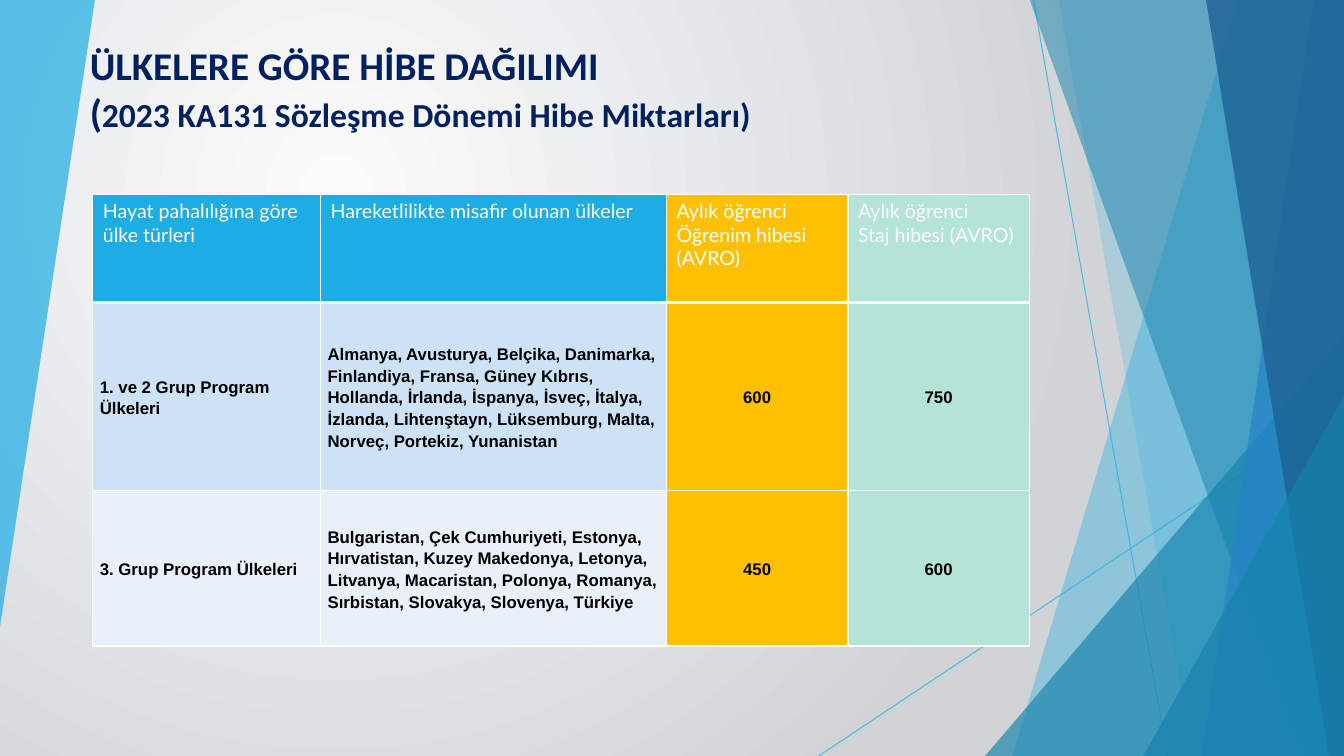
from copy import deepcopy
from lxml.etree import SubElement as Sub
from pptx import Presentation
from pptx.dml.color import RGBColor as RGB
from pptx.enum.shapes import MSO_CONNECTOR as LINK, MSO_SHAPE as SHAPE
from pptx.enum.text import MSO_ANCHOR as ANCHOR, MSO_AUTO_SIZE as AUTO, PP_ALIGN as ALIGN
from pptx.oxml.ns import qn
from pptx.util import Inches, Pt

SKY, TEAL, WHITE, GOLD, MINT = "1CADE4", "1482AC", "FFFFFF", "FFC000", "B3E4D6"


def paint(fill, color, alpha=100):
    """Fill with a solid hex colour; alpha is the opacity in percent."""
    fill.solid()
    fill.fore_color.rgb = RGB.from_string(color)
    if alpha < 100:
        tone = fill._xPr.find(qn("a:solidFill"))[0]
        Sub(tone, qn("a:alpha"), val=str(alpha * 1000))


def write(para, words, size=12, font="Arial", color="000000", bold=False):
    """Add formatted text to a paragraph, with a line break at each newline."""
    for i, line in enumerate(words.split("\n")):
        if i:
            para.add_line_break()
        run = para.add_run()
        run.text = line
        run.font.size, run.font.name, run.font.bold = Pt(size), font, bold
        paint(run.font.fill, color)
        if i:
            run._r.getprevious().append(deepcopy(run._r.rPr))


deck = Presentation()
deck.slide_width, deck.slide_height = Inches(13.33), Inches(7.5)
slide = deck.slides.add_slide(deck.slide_layouts[5])
shapes = slide.shapes

# Background: a glow centred in the upper left quarter
back = slide.background.fill
back.gradient()
for stop, color in zip(back.gradient_stops, ("FCFCFC", "D0D4D7")):
    stop.color.rgb = RGB.from_string(color)
back.gradient_stops[0].position, back.gradient_stops[1].position = 0, 1
grad = back._xPr.find(qn("a:gradFill"))
grad.remove(grad.find(qn("a:lin")))
glow = Sub(grad, qn("a:path"), path="circle")
Sub(glow, qn("a:fillToRect"), l="50000", t="50000", r="100000", b="100000")

# Thin lines behind the facets
for x1, y1, x2, y2 in [(10.25, 0, 11.58, 7.5), (13.33, 4.03, 8.12, 7.5)]:
    line = shapes.add_connector(LINK.STRAIGHT, Inches(x1), Inches(y1), Inches(x2), Inches(y2))
    line.line.width = Pt(0.75)
    paint(line.line.fill, SKY, 70)
    Sub(line.element.spPr, qn("a:effectLst"))

# Facets: a corner list is a polygon, (top x, bottom x) is a band that runs
# to the right edge, and a single left x with a top is a triangle
facets = [
    ([(0, 0), (0.94, -0.01), (0.94, 0.01), (0, 6.22)], SKY, 70),
    ((12.28, 10.04), SKY, 36),
    ((10.5, 11.83), SKY, 20),
    ({"left": 9.77, "top": 3.33}, TEAL, 66),
    ((10.21, 12.91), TEAL, 50),
    ((13.03, 11.92), "2683C6", 70),
    ((11.96, 13.18), "1D6294", 80),
    ({"left": 11.34, "top": 3.93}, TEAL, 66),
]
for form, color, alpha in facets:
    if isinstance(form, dict):
        left, top = form["left"], form["top"]
        facet = shapes.add_shape(SHAPE.ISOSCELES_TRIANGLE, Inches(left), Inches(top),
                                 Inches(13.33 - left), Inches(7.5 - top))
        facet.adjustments[0] = 1
    else:
        if isinstance(form, tuple):
            form = [(form[0], -0.01), (13.33, -0.01), (13.33, 7.5), (form[1], 7.5)]
        spots = [(Inches(x), Inches(y)) for x, y in form]
        path = shapes.build_freeform(*spots[0])
        path.add_line_segments(spots[1:], close=True)
        facet = path.convert_to_shape()
    facet.shadow.inherit = False
    facet.line.fill.background()
    paint(facet.fill, color, alpha)

# Title, brought in front of the facets
title = shapes.title
title.left, title.top, title.width, title.height = map(Inches, (0.79, 0.63, 9.43, 0.76))
frame = title.text_frame
frame.word_wrap, frame.auto_size, frame.vertical_anchor = True, AUTO.NONE, ANCHOR.BOTTOM
head = frame.paragraphs[0]
head.alignment = ALIGN.LEFT
look = dict(font="Calibri", color="002060", bold=True)
write(head, "ÜLKELERE GÖRE HİBE DAĞILIMI \n(", size=28, **look)
write(head, "2023 KA131 Sözleşme Dönemi Hibe Miktarları)", size=24, **look)
shapes.element.append(title.element)

# Grant table
rows = [
    ("Hayat pahalılığına göre ülke türleri", "Hareketlilikte misafir olunan ülkeler",
     "Aylık öğrenci Öğrenim hibesi (AVRO)", "Aylık öğrenci \nStaj hibesi (AVRO)"),
    ("1. ve 2 Grup Program Ülkeleri",
     "Almanya, Avusturya, Belçika, Danimarka, Finlandiya, Fransa, Güney Kıbrıs, "
     "Hollanda, İrlanda, İspanya, İsveç, İtalya, İzlanda, Lihtenştayn, Lüksemburg, "
     "Malta, Norveç, Portekiz, Yunanistan", "600", "750"),
    ("3. Grup Program Ülkeleri",
     "Bulgaristan, Çek Cumhuriyeti, Estonya, Hırvatistan, Kuzey Makedonya, Letonya, "
     "Litvanya, Macaristan, Polonya, Romanya, Sırbistan, Slovakya, Slovenya, Türkiye",
     "450", "600"),
]
tints = [SKY, "CDE3F5", "E8F1FA"]
widths, heights = [2.26, 3.43, 1.8, 1.8], [1.07, 1.87, 1.54]
table = shapes.add_table(3, 4, Inches(0.92), Inches(1.93),
                         Inches(sum(widths)), Inches(sum(heights))).table
for col, width in zip(table.columns, widths):
    col.width = Inches(width)
for row, height in zip(table.rows, heights):
    row.height = Inches(height)

for r, row in enumerate(rows):
    for c, words in enumerate(row):
        cell = table.cell(r, c)
        para = cell.text_frame.paragraphs[0]
        if r == 0:
            write(para, words, size=14, font="Lato", color=WHITE)
        else:
            write(para, words, bold=True)
            para.line_spacing = 1.15
            para.alignment = ALIGN.CENTER if c > 1 else ALIGN.LEFT
            cell.vertical_anchor = ANCHOR.MIDDLE
            cell.margin_left = cell.margin_right = Inches(0.07)
            cell.margin_top = cell.margin_bottom = 0
        for side in "LRTB":
            wide = 3 if r == 0 and side == "B" else 1
            edge = Sub(cell._tc.get_or_add_tcPr(), qn("a:ln" + side), w=str(Pt(wide)))
            Sub(Sub(edge, qn("a:solidFill")), qn("a:srgbClr"), val=WHITE)
        paint(cell.fill, [tints[r], tints[r], GOLD, MINT][c])

deck.save("out.pptx")
